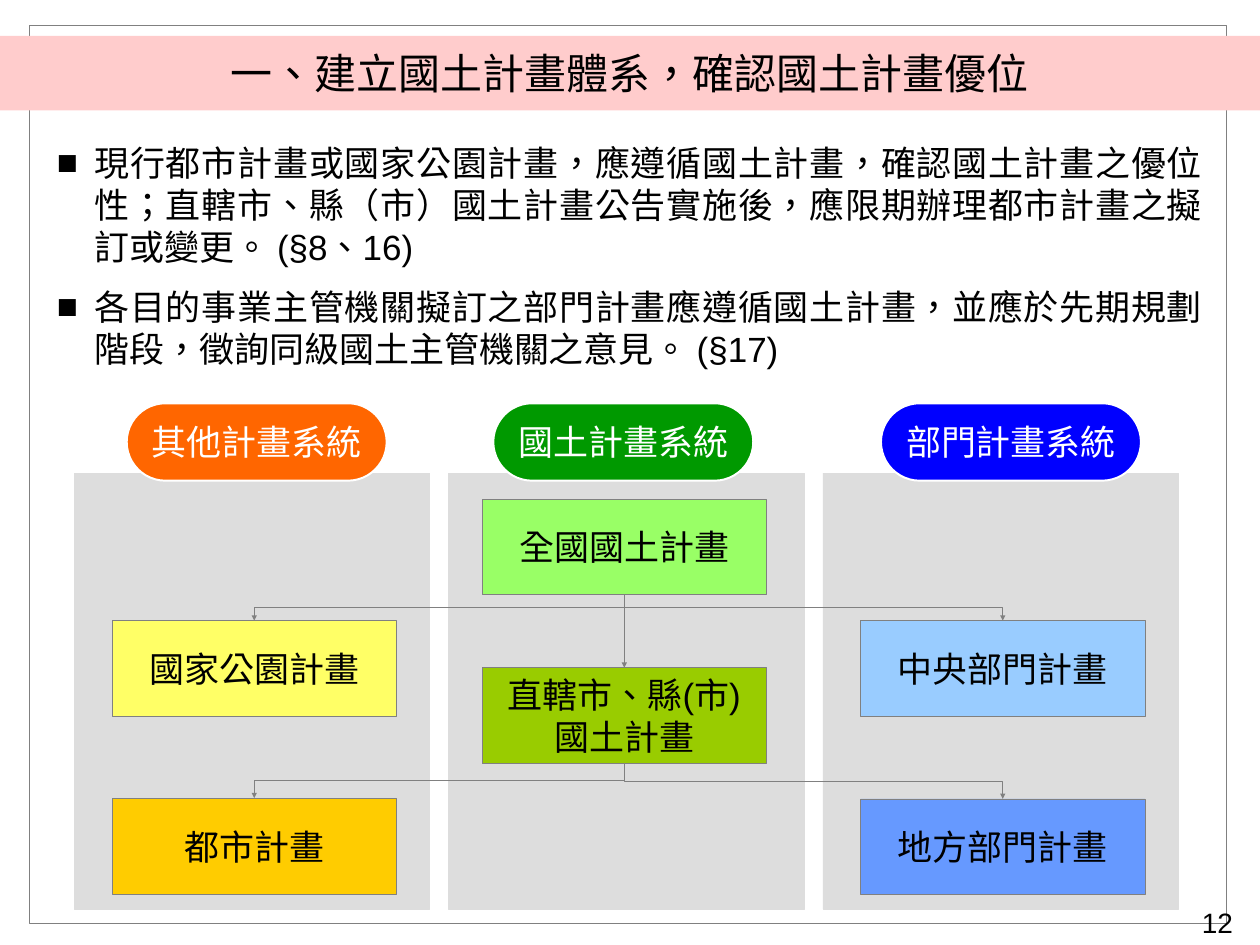
from lxml import etree
from pptx import Presentation
from pptx.dml.color import RGBColor
from pptx.enum.shapes import MSO_CONNECTOR, MSO_SHAPE
from pptx.enum.text import MSO_ANCHOR, PP_ALIGN
from pptx.oxml.ns import qn
from pptx.util import Cm, Pt

RECTANGLE, ROUNDED = MSO_SHAPE.RECTANGLE, MSO_SHAPE.ROUNDED_RECTANGLE
STRAIGHT, ELBOW = MSO_CONNECTOR.STRAIGHT, MSO_CONNECTOR.ELBOW
TOP, MIDDLE = MSO_ANCHOR.TOP, MSO_ANCHOR.MIDDLE
CENTER, RIGHT, JUSTIFY = PP_ALIGN.CENTER, PP_ALIGN.RIGHT, PP_ALIGN.JUSTIFY
CJK_FONT = "Noto Sans CJK SC"
BOTTOM_SITE, TOP_SITE = 2, 0

PAGE_WIDTH, PAGE_HEIGHT = 50.8, 38.1
PANEL_LEFT, PANEL_TOP, PANEL_STEP = 3, 19.08, 15.09
PANEL_WIDTH, PANEL_HEIGHT = 14.33, 17.58
PLAN_WIDTH, PLAN_HEIGHT = 11.46, 3.86
PILL_WIDTH, PILL_HEIGHT, PILL_RISE = 10.48, 3.12, 2.82

TITLE = "一、建立國土計畫體系，確認國土計畫優位"
POINTS = [
    "現行都市計畫或國家公園計畫，應遵循國土計畫，確認國土計畫之優位性；"
    "直轄市、縣（市）國土計畫公告實施後，應限期辦理都市計畫之擬訂或變更。 (§8、16)",
    "各目的事業主管機關擬訂之部門計畫應遵循國土計畫，"
    "並應於先期規劃階段，徵詢同級國土主管機關之意見。 (§17)",
]
OTHER_SYSTEM = {
    "name": "其他計畫系統", "color": "FF6600", "pill_inset": 2.11, "plan_inset": 1.52,
    "plans": [("國家公園計畫", "FFFF66", 5.94), ("都市計畫", "FFCC00", 13.1)],
}
LAND_SYSTEM = {
    "name": "國土計畫系統", "color": "009900", "pill_inset": 1.8, "plan_inset": 1.35,
    "plans": [("全國國土計畫", "99FF66", 1.04), ("直轄市、縣(市)國土計畫", "99CC00", 7.84)],
}
SECTOR_SYSTEM = {
    "name": "部門計畫系統", "color": "0000FF", "pill_inset": 2.34, "plan_inset": 1.52,
    "plans": [("中央部門計畫", "99CCFF", 5.94), ("地方部門計畫", "6699FF", 13.13)],
}


def rgb(value):
    """Turn a hex string into a colour."""
    return RGBColor.from_string(value)


def write(box, *texts, size=40, font="Arial", color="000000", align=CENTER,
          anchor=MIDDLE, bullet=None, gap=20):
    """Fill a box with formatted paragraphs."""
    frame = box.text_frame
    frame.word_wrap = True
    frame.vertical_anchor = anchor
    frame.margin_left = frame.margin_right = Cm(0.51)
    frame.margin_top = frame.margin_bottom = Cm(0.25)
    for index, text in enumerate(texts):
        para = frame.add_paragraph() if index else frame.paragraphs[0]
        para.alignment = align
        para.space_before = Pt(gap if index else 0)
        span = para.add_run()
        span.text = text
        span.font.size = Pt(size)
        span.font.name = font
        span.font.color.rgb = rgb(color)
        marks = span._r.get_or_add_rPr()
        marks.set("lang", "zh-TW")
        etree.SubElement(marks, qn("a:ea")).set("typeface", CJK_FONT)
        if bullet:
            layout = para._p.get_or_add_pPr()
            layout.set("marL", str(Cm(1.52)))
            layout.set("indent", str(Cm(-1.52)))
            etree.SubElement(layout, qn("a:buFont")).set("typeface", "Arial")
            etree.SubElement(layout, qn("a:buChar")).set("char", bullet)


def add_box(page, left, top, width, height, kind=RECTANGLE, fill=None, line=None, weight=0.75):
    """Add a flat preset shape with optional fill and outline."""
    box = page.shapes.add_shape(kind, Cm(left), Cm(top), Cm(width), Cm(height))
    box.shadow.inherit = False
    if fill:
        box.fill.solid()
        box.fill.fore_color.rgb = rgb(fill)
    else:
        box.fill.background()
    if line:
        box.line.color.rgb = rgb(line)
        box.line.width = Pt(weight)
    else:
        box.line.fill.background()
    return box


def add_text(page, left, top, width, height, *texts, **style):
    """Add a text box with formatted paragraphs."""
    box = page.shapes.add_textbox(Cm(left), Cm(top), Cm(width), Cm(height))
    write(box, *texts, anchor=TOP, **style)


def add_system(page, left, top, system):
    """Draw one planning system as a panel with its plans and heading; return the plans."""
    add_box(page, left, top, PANEL_WIDTH, PANEL_HEIGHT, fill="DDDDDD", line="DDDDDD")
    plans = []
    for name, color, drop in system["plans"]:
        plan = add_box(page, left + system["plan_inset"], top + drop,
                       PLAN_WIDTH, PLAN_HEIGHT, fill=color, line="808080")
        write(plan, name)
        plans.append(plan)
    pill = add_box(page, left + system["pill_inset"], top - PILL_RISE, PILL_WIDTH, PILL_HEIGHT,
                   ROUNDED, fill=system["color"], line="FFFFFF", weight=2.25)
    pill.adjustments[0] = 0.5
    write(pill, system["name"], color="FFFFFF")
    return plans


def add_link(page, upper, lower, kind=ELBOW):
    """Join the bottom of one plan to the top of another with an arrow."""
    link = page.shapes.add_connector(kind, 0, 0, 0, 0)
    link.begin_connect(upper, BOTTOM_SITE)
    link.end_connect(lower, TOP_SITE)
    link.line.color.rgb = rgb("808080")
    link.line.width = Pt(0.75)
    etree.SubElement(link.line._get_or_add_ln(), qn("a:tailEnd")).set("type", "triangle")
    etree.SubElement(link._element.spPr, qn("a:effectLst"))
    if kind == ELBOW:
        turn_upright(link)


def turn_upright(link):
    """Rotate an elbow connector so that it leaves and arrives vertically."""
    rightward = link.end_x > link.begin_x
    center_x = (link.begin_x + link.end_x) // 2
    center_y = (link.begin_y + link.end_y) // 2
    span, drop = link.width, link.height
    link.left, link.top = center_x - drop // 2, center_y - span // 2
    link.width, link.height = drop, span
    frame = link._element.spPr.find(qn("a:xfrm"))
    frame.set("rot", str((270 if rightward else 90) * 60000))
    frame.set("flipH", "1" if rightward else "0")


def add_diagram(page, left, top):
    """Draw the three planning systems and the arrows between their plans."""
    systems = (OTHER_SYSTEM, LAND_SYSTEM, SECTOR_SYSTEM)
    other, land, sector = [add_system(page, left + index * PANEL_STEP, top, system)
                           for index, system in enumerate(systems)]
    add_link(page, land[0], land[1], STRAIGHT)
    for upper, *lowers in zip(land, other, sector):
        for lower in lowers:
            add_link(page, upper, lower)


def main():
    """Build the slide and save it."""
    deck = Presentation()
    deck.slide_width, deck.slide_height = Cm(PAGE_WIDTH), Cm(PAGE_HEIGHT)
    page = deck.slides.add_slide(deck.slide_layouts[6])
    add_box(page, 1.17, 1.04, 48.26, 36.17, line="808080")
    add_text(page, 35.41, 36.25, 14.81, 1.85, "12", size=32, align=RIGHT)
    banner = add_box(page, 0, 1.45, PAGE_WIDTH, 3, fill="FFCCCC")
    write(banner, TITLE, size=48, font=CJK_FONT)
    add_diagram(page, PANEL_LEFT, PANEL_TOP)
    add_text(page, 1.78, 5.46, 47.22, 9.83, *POINTS, align=JUSTIFY, bullet="■")
    deck.save("out.pptx")


if __name__ == "__main__":
    main()
